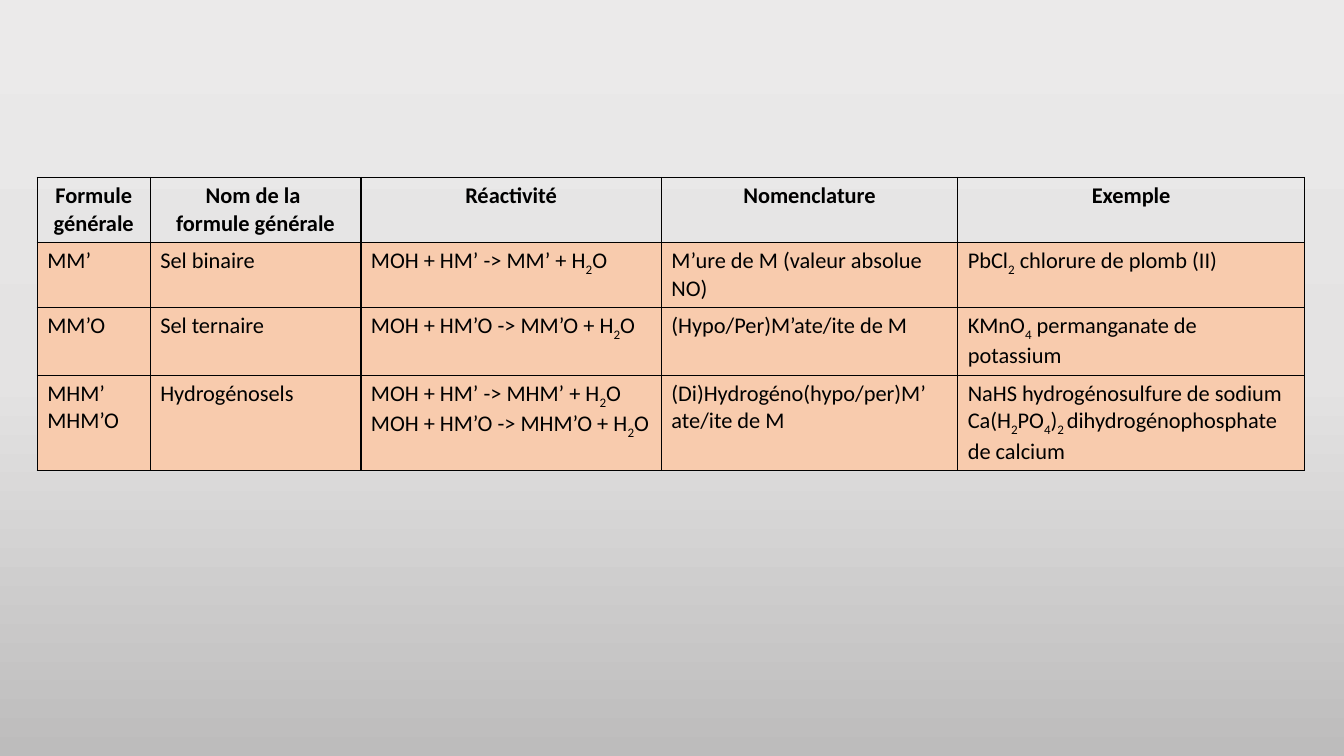
from copy import deepcopy
from dataclasses import dataclass

from lxml import etree
from pptx import Presentation
from pptx import util as u
from pptx.dml.color import RGBColor
from pptx.enum import text
from pptx.oxml import ns


@dataclass(frozen=True)
class Theme:
    font: str = "Calibri"
    size: int = 16
    ink: str = "000000"
    row_fill: str = "F8CBAD"
    border_width: float = 1
    background: tuple[str, ...] = ("EBEAEA", "E4E3E3", "BDBCBC")


@dataclass(frozen=True)
class Column:
    """A heading, a width in inches and the body texts; _2_ marks a subscript."""
    heading: str
    width: float
    bodies: tuple[str, ...]


THEME = Theme()
TABLE_LEFT, TABLE_TOP, TABLE_HEIGHT, ROW_HEIGHT = 0.37, 1.76, 2.8, 0.41
COLUMNS = (
    Column("Formule générale", 1.12, ("MM’", "MM’O", "MHM’\nMHM’O")),
    Column("Nom de la \nformule générale", 2.09,
           ("Sel binaire", "Sel ternaire", "Hydrogénosels")),
    Column("Réactivité", 2.98,
           ("MOH + HM’ -> MM’ + H_2_O",
            "MOH + HM’O -> MM’O + H_2_O",
            "MOH + HM’ -> MHM’ + H_2_O\nMOH + HM’O -> MHM’O + H_2_O")),
    Column("Nomenclature", 2.94,
           ("M’ure de M (valeur absolue NO)",
            "(Hypo/Per)M’ate/ite de M",
            "(Di)Hydrogéno(hypo/per)M’\nate/ite de M")),
    Column("Exemple", 3.44,
           ("PbCl_2_ chlorure de plomb (II)",
            "KMnO_4_ permanganate de potassium",
            "NaHS hydrogénosulfure de sodium\n"
            "Ca(H_2_PO_4_)_2 _dihydrogénophosphate de calcium")),
)


def paint_background(slide) -> None:
    fill = slide.background.fill
    fill.gradient()
    fill.gradient_angle = 270
    first_stop = fill.gradient_stops[0]._gs
    first_stop.addnext(deepcopy(first_stop))
    last = len(THEME.background) - 1
    for index, (stop, color) in enumerate(zip(fill.gradient_stops, THEME.background)):
        stop.position = index / last
        stop.color.rgb = RGBColor.from_string(color)


def add_borders(cell) -> None:
    properties = cell._tc.get_or_add_tcPr()
    for index, side in enumerate(("lnL", "lnR", "lnT", "lnB")):
        line = etree.Element(ns.qn(f"a:{side}"), w=str(u.Pt(THEME.border_width)))
        fill = etree.SubElement(line, ns.qn("a:solidFill"))
        etree.SubElement(fill, ns.qn("a:srgbClr"), val=THEME.ink)
        properties.insert(index, line)


def write_cell(cell, content: str, heading: bool) -> None:
    font_format = {"name": THEME.font, "size": u.Pt(THEME.size), "bold": heading}
    cell.text = content.replace("_", "")
    for paragraph, line in zip(cell.text_frame.paragraphs, content.split("\n")):
        paragraph.clear()
        paragraph.alignment = text.PP_ALIGN.CENTER if heading else text.PP_ALIGN.LEFT
        for index, part in enumerate(line.split("_")):
            run = paragraph.add_run()
            run.text = part
            for name, value in font_format.items():
                setattr(run.font, name, value)
            run.font.color.rgb = RGBColor.from_string(THEME.ink)
            if index % 2:
                run.font._element.set("baseline", "-25000")


def style_cell(cell, heading: bool) -> None:
    if heading:
        cell.fill.background()
    else:
        cell.fill.solid()
        cell.fill.fore_color.rgb = RGBColor.from_string(THEME.row_fill)
    add_borders(cell)


def add_salt_table(slide) -> None:
    row_count = 1 + len(COLUMNS[0].bodies)
    frame = slide.shapes.add_table(
        row_count, len(COLUMNS), u.Inches(TABLE_LEFT), u.Inches(TABLE_TOP),
        u.Inches(sum(column.width for column in COLUMNS)), u.Inches(TABLE_HEIGHT))
    table = frame.table
    table.first_row = True
    table.horz_banding = False
    for row in table.rows:
        row.height = u.Inches(ROW_HEIGHT)
    for column_index, column in enumerate(COLUMNS):
        table.columns[column_index].width = u.Inches(column.width)
        for row_index, content in enumerate((column.heading, *column.bodies)):
            cell = table.cell(row_index, column_index)
            write_cell(cell, content, heading=row_index == 0)
            style_cell(cell, heading=row_index == 0)
    frame.height = u.Inches(TABLE_HEIGHT)


def main() -> None:
    presentation = Presentation()
    presentation.slide_width = u.Inches(13.33)
    presentation.slide_height = u.Inches(7.5)
    slide = presentation.slides.add_slide(presentation.slide_layouts[6])
    paint_background(slide)
    add_salt_table(slide)
    presentation.save("out.pptx")


if __name__ == "__main__":
    main()
